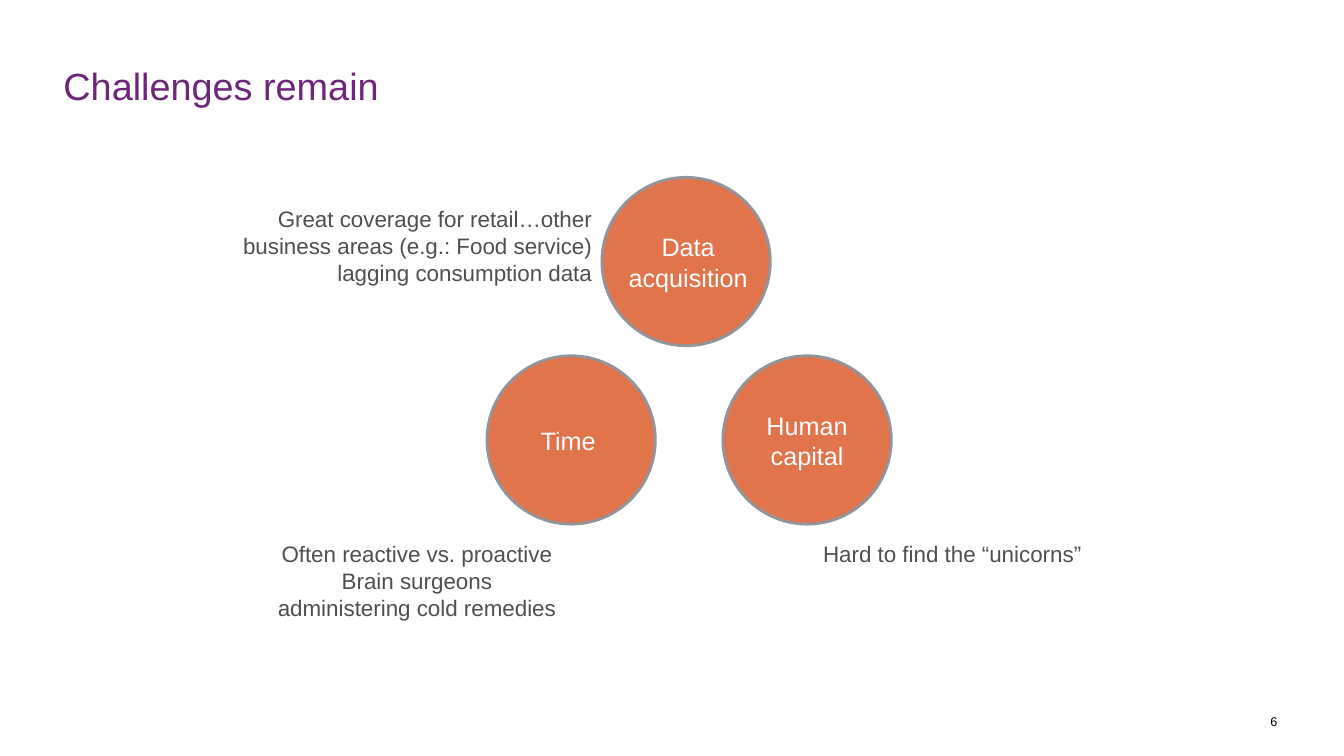
from pptx import Presentation
from pptx.dml.color import RGBColor
from pptx.enum.shapes import MSO_SHAPE
from pptx.enum.text import MSO_ANCHOR, PP_ALIGN
from pptx.util import Inches, Pt

LEFT, CENTER, RIGHT = PP_ALIGN.LEFT, PP_ALIGN.CENTER, PP_ALIGN.RIGHT
TOP, MIDDLE = MSO_ANCHOR.TOP, MSO_ANCHOR.MIDDLE
OVAL = MSO_SHAPE.OVAL

COLORS = {
    "title": "6E267B",
    "circle": "E2744C",
    "border": "929499",
    "label": "FFFFFF",
    "note": "4D4F53",
    "number": "000000",
}


def color(name):
    return RGBColor.from_string(COLORS[name])


def add_text(text, left, top, width, height, *, size, tint,
             align=LEFT, anchor=TOP, inset=0.1):
    """Add a text box with one paragraph per line of text."""
    box = slide.shapes.add_textbox(
        Inches(left), Inches(top), Inches(width), Inches(height))
    frame = box.text_frame
    frame.word_wrap = True
    frame.vertical_anchor = anchor
    frame.margin_left = frame.margin_right = Inches(inset)
    frame.text = text
    for para in frame.paragraphs:
        para.alignment = align
        para.font.name = "Arial"
        para.font.size = Pt(size)
        para.font.color.rgb = color(tint)


prs = Presentation()
prs.slide_width, prs.slide_height = Inches(13.33), Inches(7.5)
slide = prs.slides.add_slide(prs.slide_layouts[6])

add_text("Challenges remain", 0.63, 0.5, 12, 0.7,
         size=27, tint="title", anchor=MIDDLE, inset=0)

# Circles: left and top of the circle, then of its label
SIZE = 1.67
circles = [
    ("Time", 4.83, 3.53, 4.83, 4.17, 0.4),
    ("Data acquisition", 5.97, 1.76, 6.02, 2.25, 0.71),
    ("Human capital", 7.17, 3.53, 7.2, 4.02, 0.71),
]
for label, left, top, text_left, text_top, height in circles:
    circle = slide.shapes.add_shape(
        OVAL, Inches(left), Inches(top), Inches(SIZE), Inches(SIZE))
    circle.shadow.inherit = False
    circle.fill.solid()
    circle.fill.fore_color.rgb = color("circle")
    circle.line.color.rgb = color("border")
    circle.line.width = Pt(2)
    add_text(label, text_left, text_top, 1.61, height,
             size=18, tint="label", align=CENTER)

# Notes beside the circles
notes = [
    ("Great coverage for retail…other business areas "
     "(e.g.: Food service) lagging consumption data",
     2.15, 1.99, 3.82, 0.91, RIGHT),
    ("Often reactive vs. proactive\n"
     "Brain surgeons administering cold remedies",
     2.63, 5.31, 3.01, 0.91, CENTER),
    ("Hard to find the “unicorns”", 8.01, 5.31, 2.87, 0.37, CENTER),
]
for note, left, top, width, height, align in notes:
    add_text(note, left, top, width, height,
             size=16, tint="note", align=align)

add_text("6", 9.56, 6.96, 3.11, 0.4,
         size=9, tint="number", align=RIGHT, anchor=MIDDLE, inset=0)

prs.save("out.pptx")
